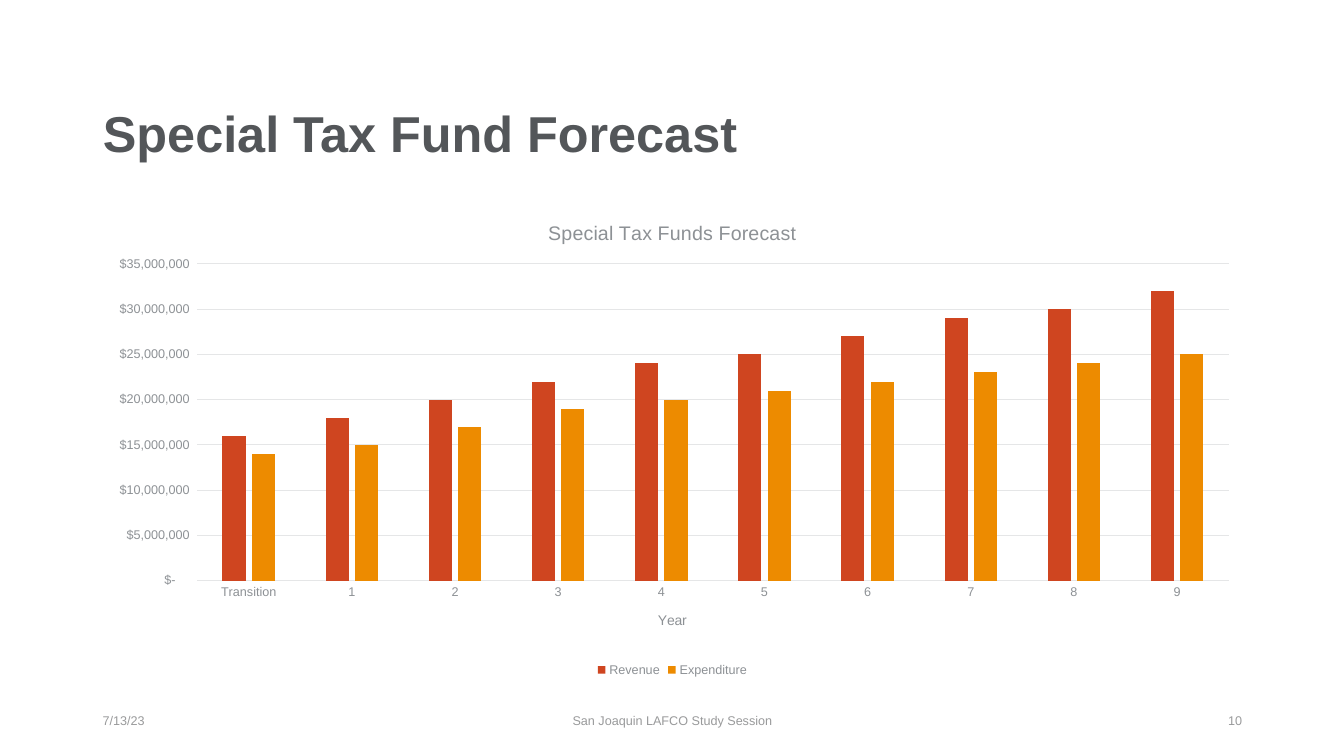
from dataclasses import dataclass

import pptx
import pptx.chart.data
import pptx.dml.color
import pptx.enum.chart
import pptx.enum.text
import pptx.oxml
import pptx.util
from pptx.util import Cm

ALIGN = pptx.enum.text.PP_ALIGN


@dataclass(frozen=True)
class Theme:
    face: str = "Arial"
    dark: str = "535659"
    gray: str = "8D9195"
    foot: str = "999A9B"
    grid: str = "E5E6E7"
    head_size: int = 36
    name_size: int = 14
    axis_size: int = 10
    small: int = 9


@dataclass(frozen=True)
class Series:
    name: str
    color: str
    funds: tuple[int, ...]  # millions of dollars


@dataclass(frozen=True)
class Footer:
    text: str
    left: float
    width: float
    align: ALIGN


THEME = Theme()
LEFT, WIDTH = 2.34, 29.21
YEARS = ["Transition", *map(str, range(1, 10))]
SERIES = [
    Series("Revenue", "CF4520", (16, 18, 20, 22, 24, 25, 27, 29, 30, 32)),
    Series("Expenditure", "ED8B00", (14, 15, 17, 19, 20, 21, 22, 23, 24, 25)),
]
FOOTERS = [
    Footer("7/13/23", LEFT, 7.62, ALIGN.LEFT),
    Footer("San Joaquin LAFCO Study Session", 11.23, 11.43, ALIGN.CENTER),
    Footer("10", 23.93, 7.62, ALIGN.RIGHT),
]
# Plot area as shares of the chart frame
PLOT = {"x": 0.09, "y": 0.13, "w": 0.89, "h": 0.66}
DOLLARS = r'_("$"* #,##0_);_("$"* \(#,##0\);_("$"* "-"??_);_(@_)'


def paint(code: str) -> pptx.dml.color.RGBColor:
    return pptx.dml.color.RGBColor.from_string(code)


def set_font(font, size: int, color: str, bold: bool = False) -> None:
    font.name = THEME.face
    font.size = pptx.util.Pt(size)
    font.bold = bold
    font.color.rgb = paint(color)


def write(frame, text: str, *, size: int, color: str, bold: bool = False,
          align: ALIGN | None = None, space: float | None = None) -> None:
    line = frame.paragraphs[0]
    run = line.add_run()
    run.text = text
    set_font(run.font, size, color, bold)
    if align is not None:
        line.alignment = align
    if space is not None:
        line.line_spacing = space


def set_line(line) -> None:
    line.color.rgb = paint(THEME.grid)
    line.width = pptx.util.Pt(0.75)


def place_plot(chart) -> None:
    """Pin the inner plot area inside the chart frame."""
    area = chart._chartSpace.chart.plotArea
    for old in area.findall(pptx.oxml.ns.qn("c:layout")):
        area.remove(old)
    modes = "".join(f'<c:{key}Mode val="edge"/>' for key in "xy")
    sizes = "".join(f'<c:{key} val="{part}"/>' for key, part in PLOT.items())
    area.insert(0, pptx.oxml.parse_xml(
        f'<c:layout {pptx.oxml.ns.nsdecls("c")}><c:manualLayout>'
        f'<c:layoutTarget val="inner"/>{modes}{sizes}'
        '</c:manualLayout></c:layout>'))


def add_title(slide) -> None:
    title = slide.shapes.title
    title.left, title.top = Cm(LEFT), Cm(2.18)
    title.width, title.height = Cm(WIDTH), Cm(2.51)
    title.text_frame.vertical_anchor = pptx.enum.text.MSO_ANCHOR.MIDDLE
    write(title.text_frame, "Special Tax Fund Forecast", size=THEME.head_size,
          color=THEME.dark, bold=True, align=ALIGN.LEFT, space=0.9)


def add_chart(slide) -> None:
    data = pptx.chart.data.CategoryChartData(number_format=DOLLARS)
    data.categories = YEARS
    for item in SERIES:
        data.add_series(item.name, [fund * 1_000_000 for fund in item.funds])
    chart = slide.shapes.add_chart(
        pptx.enum.chart.XL_CHART_TYPE.COLUMN_CLUSTERED,
        Cm(LEFT), Cm(5.08), Cm(WIDTH), Cm(12.09), data).chart
    set_font(chart.font, THEME.axis_size, THEME.dark)

    # Title and legend
    chart.has_title = True
    write(chart.chart_title.text_frame, "Special Tax Funds Forecast",
          size=THEME.name_size, color=THEME.gray)
    chart.chart_title.include_in_layout = False
    chart.has_legend = True
    chart.legend.position = pptx.enum.chart.XL_LEGEND_POSITION.BOTTOM
    chart.legend.include_in_layout = False
    set_font(chart.legend.font, THEME.small, THEME.gray)

    # Columns
    plot = chart.plots[0]
    plot.gap_width, plot.overlap = 219, -27
    plot.vary_by_categories = False
    for bars, item in zip(plot.series, SERIES):
        bars.format.fill.solid()
        bars.format.fill.fore_color.rgb = paint(item.color)
        bars.invert_if_negative = False

    # Axes
    years, funds = chart.category_axis, chart.value_axis
    for axis in (years, funds):
        axis.major_tick_mark = pptx.enum.chart.XL_TICK_MARK.NONE
        axis.minor_tick_mark = pptx.enum.chart.XL_TICK_MARK.NONE
        set_font(axis.tick_labels.font, THEME.small, THEME.gray)
    set_line(years.format.line)
    write(years.axis_title.text_frame, "Year",
          size=THEME.axis_size, color=THEME.gray)
    funds.minimum_scale, funds.maximum_scale = 0, 35_000_000
    funds.major_unit = 5_000_000
    funds.tick_labels.number_format = DOLLARS
    funds.tick_labels.number_format_is_linked = False
    funds.format.line.fill.background()
    funds.has_major_gridlines = True
    set_line(funds.major_gridlines.format.line)
    place_plot(chart)


def add_footer(slide, foot: Footer) -> None:
    box = slide.shapes.add_textbox(
        Cm(foot.left), Cm(17.65), Cm(foot.width), Cm(1.02))
    box.text_frame.word_wrap = True
    box.text_frame.vertical_anchor = pptx.enum.text.MSO_ANCHOR.MIDDLE
    write(box.text_frame, foot.text, size=THEME.small, color=THEME.foot,
          align=foot.align)


def main() -> None:
    deck = pptx.Presentation()
    deck.slide_width, deck.slide_height = Cm(33.87), Cm(19.05)
    slide = deck.slides.add_slide(deck.slide_layouts.get_by_name("Title Only"))
    add_title(slide)
    add_chart(slide)
    for foot in FOOTERS:
        add_footer(slide, foot)
    deck.save("out.pptx")


if __name__ == "__main__":
    main()
